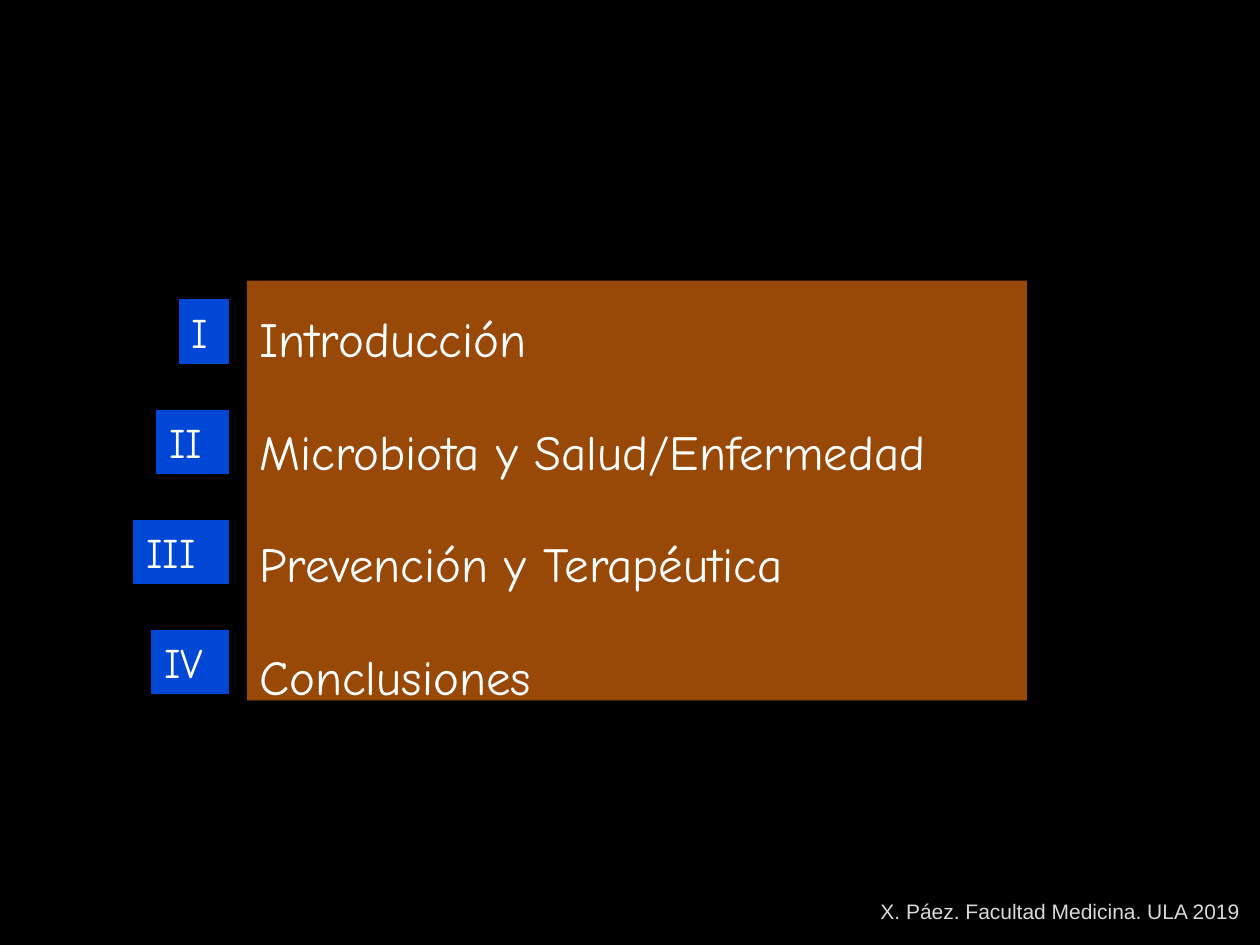
"""Build the agenda slide: four numbered topics on a brown panel."""
from pptx import Presentation
from pptx.dml.color import RGBColor
from pptx.enum.shapes import MSO_SHAPE
from pptx.enum.text import MSO_ANCHOR, PP_ALIGN
from pptx.util import Cm, Pt

TOPICS = [
    ("I", 0.99, "Introducción"),
    ("II", 1.45, "Microbiota y Salud/Enfermedad"),
    ("III", 1.91, "Prevención y Terapéutica"),
    ("IV", 1.55, "Conclusiones"),
]
CREDIT = "X. Páez. Facultad Medicina. ULA 2019"
COLORS = {"back": "000000", "panel": "984807", "badge": "0047D6",
          "text": "FFFFFF", "credit": "D9D9D9"}
BADGE_RIGHT, BADGE_TOP, BADGE_PITCH, BADGE_HEIGHT = 4.61, 6.05, 2.22, 1.27


def rgb(name):
    return RGBColor.from_string(COLORS[name])


def add_text(sp, lines, size, font="Comic Neue", color="text",
             anchor=MSO_ANCHOR.TOP, wrap=True, gap=0, top=0.13):
    tf = sp.text_frame
    tf.word_wrap = wrap
    tf.vertical_anchor = anchor
    tf.margin_top = Cm(top)
    for i, line in enumerate(lines):
        p = tf.paragraphs[0] if i == 0 else tf.add_paragraph()
        p.alignment = PP_ALIGN.LEFT
        p.space_before = Pt(gap if i else 0)
        r = p.add_run()
        r.text = line
        r.font.size = Pt(size)
        r.font.name = font
        r.font.color.rgb = rgb(color)


def add_box(s, left, top, width, height, color, outlined=False):
    sp = s.shapes.add_shape(MSO_SHAPE.RECTANGLE, Cm(left), Cm(top), Cm(width), Cm(height))
    sp.shadow.inherit = False
    sp.fill.solid()
    sp.fill.fore_color.rgb = rgb(color)
    if outlined:
        sp.line.color.rgb = rgb(color)
        sp.line.width = Pt(0.75)
    else:
        sp.line.fill.background()
    return sp


def main():
    prs = Presentation()
    prs.slide_width, prs.slide_height = Cm(25.4), Cm(19.05)
    s = prs.slides.add_slide(prs.slide_layouts[6])
    s.background.fill.solid()
    s.background.fill.fore_color.rgb = rgb("back")

    credit = s.shapes.add_textbox(Cm(17.5), Cm(17.98), Cm(7.82), Cm(0.76))
    add_text(credit, [CREDIT], 12, font="Arial", color="credit", wrap=False)

    panel = add_box(s, 4.98, 5.66, 15.72, 8.46, "panel")
    add_text(panel, [topic for _, _, topic in TOPICS], 28, gap=30.7, top=0.56)

    for i, (numeral, width, _) in enumerate(TOPICS):
        badge = add_box(s, BADGE_RIGHT - width, BADGE_TOP + i * BADGE_PITCH,
                        width, BADGE_HEIGHT, "badge", outlined=True)
        add_text(badge, [numeral], 24, anchor=MSO_ANCHOR.MIDDLE, wrap=False)

    prs.save("out.pptx")


if __name__ == "__main__":
    main()
